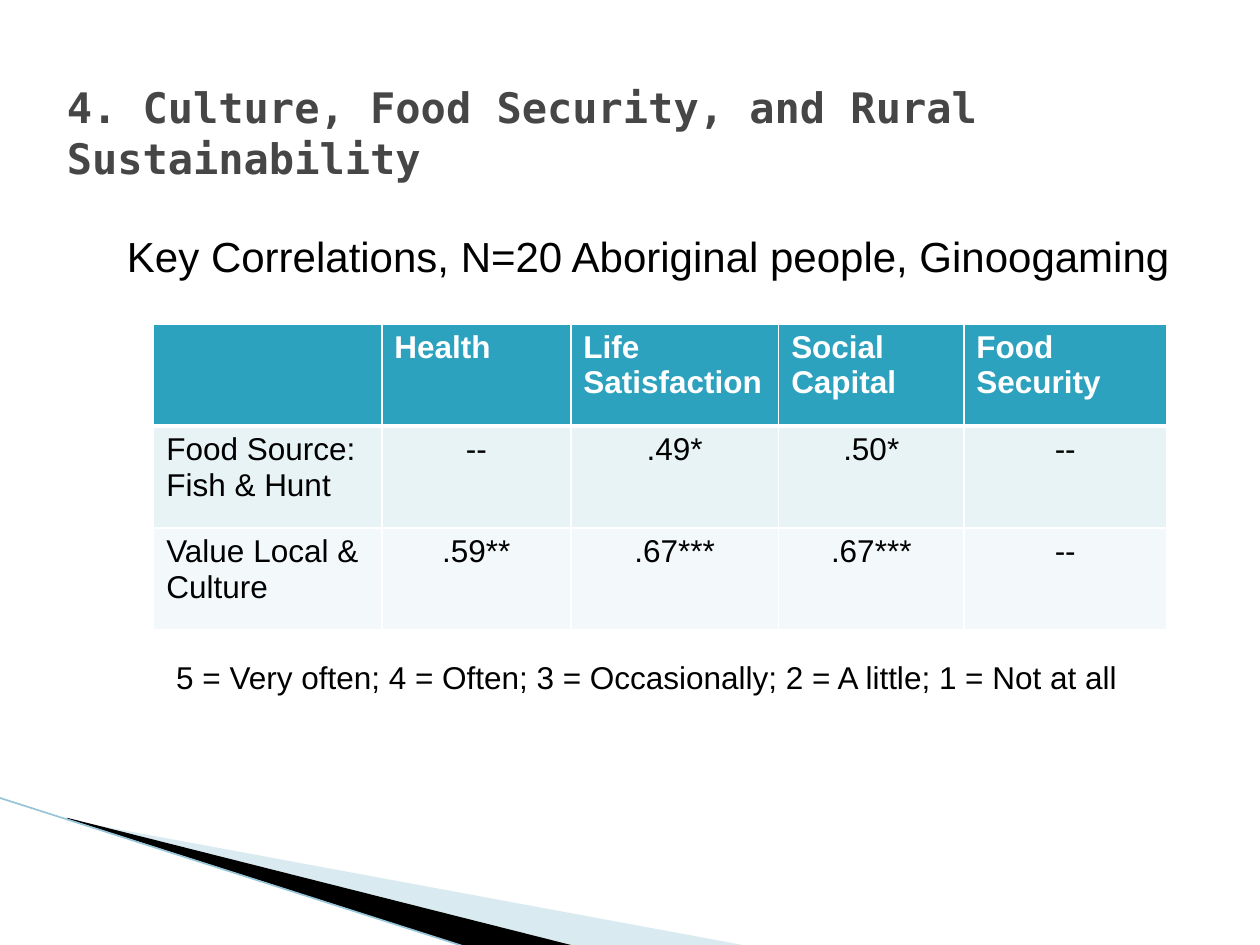
from dataclasses import dataclass

from lxml import etree
from pptx import Presentation
from pptx.dml.color import RGBColor
from pptx.enum.shapes import MSO_CONNECTOR
from pptx.enum.text import MSO_ANCHOR, MSO_AUTO_SIZE, PP_ALIGN
from pptx.oxml.ns import qn
from pptx.util import Inches, Pt

STRAIGHT = MSO_CONNECTOR.STRAIGHT
TOP = MSO_ANCHOR.TOP
NO_FIT, GROW = MSO_AUTO_SIZE.NONE, MSO_AUTO_SIZE.SHAPE_TO_FIT_TEXT
LEFT, CENTER = PP_ALIGN.LEFT, PP_ALIGN.CENTER


@dataclass(frozen=True)
class Theme:
    heading_font: str = "DejaVu Sans Mono"
    body_font: str = "Arial"
    heading_size: int = 24
    body_size: int = 18
    heading: str = "464646"
    text: str = "000000"
    white: str = "FFFFFF"
    header_fill: str = "2DA2BF"
    row_fills: tuple = ("E7F3F4", "F3F9FA")
    pale_wedge: str = "A0CBDC"
    dark_wedge: str = "000000"
    edge: str = "97C5D8"


theme = Theme()


def add_run(paragraph, text, size, color, font=theme.body_font, bold=False):
    run = paragraph.add_run()
    run.text = text
    run.font.name = font
    run.font.size = Pt(size)
    run.font.bold = bold
    run.font.color.rgb = RGBColor.from_string(color)


def set_borders(cell, widths):
    """Draw white borders; widths are points for left, right, top, bottom."""
    properties = cell._tc.get_or_add_tcPr()
    for index, (side, width) in enumerate(zip("LRTB", widths)):
        line = etree.Element(qn(f"a:ln{side}"), w=str(Pt(width)))
        fill = etree.SubElement(line, qn("a:solidFill"))
        etree.SubElement(fill, qn("a:srgbClr"), val=theme.white)
        properties.insert(index, line)


prs = Presentation()
prs.slide_width, prs.slide_height = Inches(10), Inches(7.5)
slide = prs.slides.add_slide(prs.slide_layouts[5])
shapes = slide.shapes

# Corner decoration
wedges = [
    ([(0.55, 6.51), (5.95, 7.51), (4.56, 7.51), (0.55, 6.5)], theme.pale_wedge, 40),
    ([(0.53, 6.49), (4.57, 7.51), (3.72, 7.52), (0.54, 6.5)], theme.dark_wedge, 100),
]
for corners, color, opacity in wedges:
    points = [(Inches(x), Inches(y)) for x, y in corners]
    builder = shapes.build_freeform(*points[0])
    builder.add_line_segments(points[1:], close=True)
    wedge = builder.convert_to_shape()
    wedge.shadow.inherit = False
    wedge.line.fill.background()
    wedge.fill.solid()
    wedge.fill.fore_color.rgb = RGBColor.from_string(color)
    if opacity < 100:
        srgb = wedge._element.spPr.find(f"{qn('a:solidFill')}/{qn('a:srgbClr')}")
        etree.SubElement(srgb, qn("a:alpha"), val=str(opacity * 1000))

edge = shapes.add_connector(
    STRAIGHT, Inches(-0.01), Inches(6.33), Inches(3.71), Inches(7.52))
edge.line.color.rgb = RGBColor.from_string(theme.edge)
edge.line.width = Pt(0.95)
etree.SubElement(edge._element.spPr, qn("a:effectLst"))

# Title
title = shapes.title
title.left, title.top = Inches(0.43), Inches(0.6)
title.width, title.height = Inches(9), Inches(0.69)
title.text_frame.word_wrap = True
title.text_frame.auto_size = NO_FIT
title.text_frame.vertical_anchor = TOP
heading = title.text_frame.paragraphs[0]
heading.alignment = LEFT
add_run(heading, "4. Culture, Food Security, and Rural Sustainability",
        theme.heading_size, theme.heading, theme.heading_font, bold=True)

# Table heading and scale note
captions = [
    ("Key Correlations, N=20 Aboriginal people, Ginoogaming",
     (0.91, 1.78, 8.57, 0.5), theme.heading_size),
    ("5 = Very often; 4 = Often; 3 = Occasionally; 2 = A little; 1 = Not at all",
     (1.3, 5.17, 7.71, 0.4), theme.body_size),
]
for text, place, size in captions:
    caption = shapes.add_textbox(*(Inches(length) for length in place)).text_frame
    caption.word_wrap = False
    caption.auto_size = GROW
    add_run(caption.paragraphs[0], text, size, theme.text)

# Correlation table
correlations = [
    ["", "Health", "Life Satisfaction", "Social Capital", "Food Security"],
    ["Food Source: Fish & Hunt", "--", ".49*", ".50*", "--"],
    ["Value Local & Culture", ".59**", ".67***", ".67***", "--"],
]
column_widths = [1.81, 1.5, 1.65, 1.47, 1.61]
row_height = 0.81
row_fills = [theme.header_fill, *theme.row_fills]
row_borders = [(1, 1, 1, 3), (1, 1, 3, 1), (1, 1, 1, 1)]

table = shapes.add_table(
    len(correlations), len(column_widths), Inches(1.22), Inches(2.57),
    Inches(sum(column_widths)), Inches(row_height * len(correlations))).table
for column, width in zip(table.columns, column_widths):
    column.width = Inches(width)

for r, values in enumerate(correlations):
    table.rows[r].height = Inches(row_height)
    is_header = r == 0
    for c, value in enumerate(values):
        cell = table.cell(r, c)
        cell.fill.solid()
        cell.fill.fore_color.rgb = RGBColor.from_string(row_fills[r])
        set_borders(cell, row_borders[r])
        paragraph = cell.text_frame.paragraphs[0]
        paragraph.alignment = LEFT if is_header or c == 0 else CENTER
        if value:
            add_run(paragraph, value, theme.body_size,
                    theme.white if is_header else theme.text, bold=is_header)

prs.save("out.pptx")
